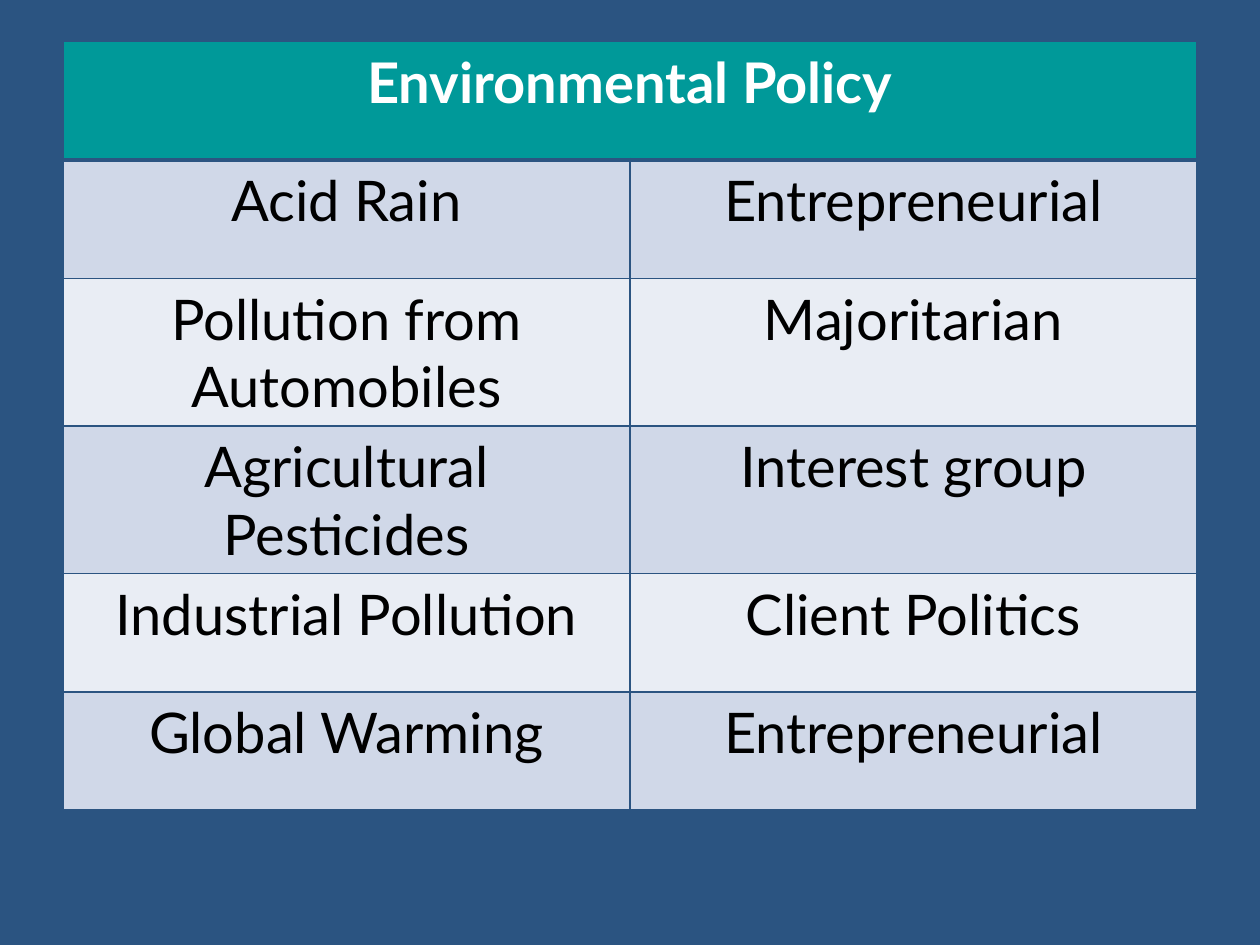
"""Build a slide with a table of environmental issues and their types of politics."""
from lxml import etree
from pptx import Presentation
from pptx import util as u
from pptx.dml.color import RGBColor
from pptx.enum import text
from pptx.oxml.ns import qn

HUES = {"back": "2B5481", "head": "009999", "odd": "D0D8E8", "even": "E9EDF4",
        "light": "FFFFFF", "dark": "000000"}
ROWS = [
    ("Environmental Policy", ""),
    ("Acid Rain", "Entrepreneurial"),
    ("Pollution from Automobiles", "Majoritarian"),
    ("Agricultural Pesticides", "Interest group"),
    ("Industrial Pollution", "Client Politics"),
    ("Global Warming", "Entrepreneurial"),
]
WIDE, HIGH = 4.5, 0.94


def edge(cell, side, width):
    line = etree.SubElement(cell._tc.get_or_add_tcPr(), qn(f"a:ln{side}"), w=str(u.Pt(width)))
    fill = etree.SubElement(line, qn("a:solidFill"))
    etree.SubElement(fill, qn("a:srgbClr"), val=HUES["back"])


deck = Presentation()
deck.slide_width, deck.slide_height = u.Inches(10), u.Inches(7.5)
slide = deck.slides.add_slide(deck.slide_layouts[6])
slide.background.fill.solid()
slide.background.fill.fore_color.rgb = RGBColor.from_string(HUES["back"])

table = slide.shapes.add_table(
    len(ROWS), 2, u.Inches(0.5), u.Inches(0.33),
    u.Inches(2 * WIDE), u.Inches(len(ROWS) * HIGH)).table
table.cell(0, 0).merge(table.cell(0, 1))

for r, row in enumerate(ROWS):
    table.rows[r].height = u.Inches(HIGH)
    tint = "head" if r == 0 else "odd" if r % 2 else "even"
    for c, label in enumerate(row):
        cell = table.cell(r, c)
        for side in "LRTB":
            edge(cell, side, 3 if (r, side) in ((0, "B"), (1, "T")) else 1)
        cell.fill.solid()
        cell.fill.fore_color.rgb = RGBColor.from_string(HUES[tint])
        if cell.is_spanned:
            continue
        cell.text = label
        para = cell.text_frame.paragraphs[0]
        para.alignment = text.PP_ALIGN.CENTER
        para.font.name, para.font.size, para.font.bold = "Lato", u.Pt(32), r == 0
        para.font.color.rgb = RGBColor.from_string(HUES["dark" if r else "light"])

deck.save("out.pptx")
